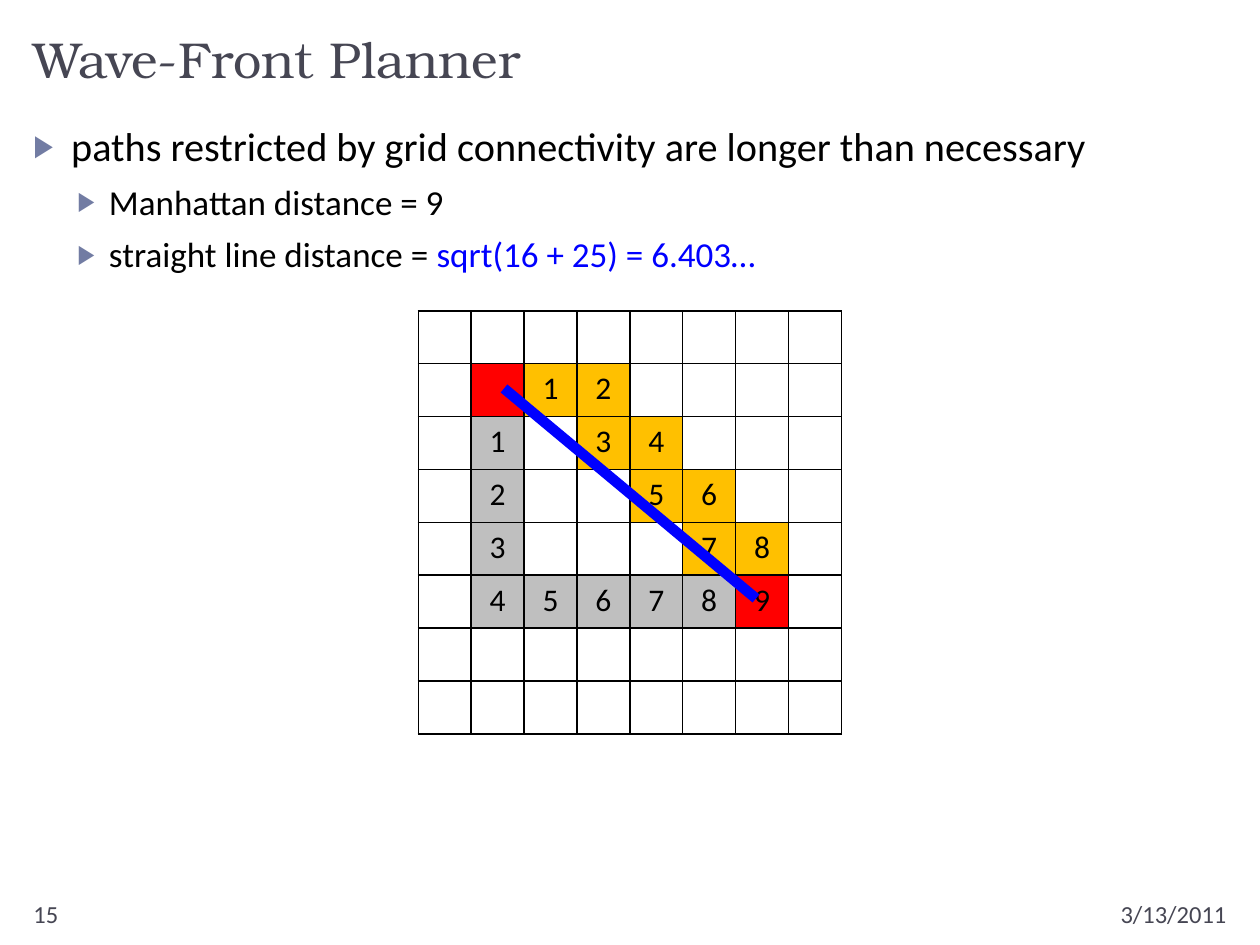
from lxml.etree import SubElement
from pptx import Presentation
from pptx.dml.color import RGBColor
from pptx.enum.shapes import MSO_CONNECTOR
from pptx.enum.text import MSO_ANCHOR, PP_ALIGN
from pptx.oxml.ns import qn
from pptx.util import Inches, Pt

COLORS = {
    "title": "464653", "text": "000000", "bullet": "727CA3",
    "line": "0000FF", "empty": "FFFFFF", "endpoint": "FF0000",
    "corner_path": "BFBFBF", "stair_path": "FFC000",
}
BODY_FONT, TITLE_FONT = "Calibri", "TeX Gyre Bonum"
UNIT = 1 / 6  # inches per column and row of the 60 x 45 layout grid

CELLS, CELL_SIZE = 8, 2.52
START = (1, 1)
MOVES = {"D": (1, 0), "R": (0, 1)}
PATHS = {"corner_path": "DDDDRRRRR", "stair_path": "RRDRDRDRD"}


def units(count):
    return Inches(count * UNIT)


def rgb(name):
    return RGBColor.from_string(COLORS[name])


def add_text(paragraph, text, size=18, color="text", font=BODY_FONT, align=PP_ALIGN.LEFT):
    paragraph.alignment = align
    run = paragraph.add_run()
    run.text = text
    run.font.size = Pt(size)
    run.font.name = font
    run.font.color.rgb = rgb(color)


def add_bullet(paragraph, level):
    paragraph.space_before = Pt(6)
    paragraph.level = level - 1
    margin, indent = {1: (0.3, -0.3), 2: (0.6, -0.25)}[level]
    properties = paragraph._p.get_or_add_pPr()
    properties.set("marL", str(Inches(margin)))
    properties.set("indent", str(Inches(indent)))
    color = SubElement(properties, qn("a:buClr"))
    SubElement(color, qn("a:srgbClr"), val=COLORS["bullet"])
    SubElement(properties, qn("a:buSzPct"), val="76000")
    SubElement(properties, qn("a:buFont"), typeface="Arial")
    SubElement(properties, qn("a:buChar"), char="▶")


def add_borders(cell):
    properties = cell._tc.get_or_add_tcPr()
    for position, side in enumerate(("lnL", "lnR", "lnT", "lnB")):
        border = SubElement(properties, qn(f"a:{side}"), w=str(Pt(1)))
        fill = SubElement(border, qn("a:solidFill"))
        SubElement(fill, qn("a:srgbClr"), val=COLORS["text"])
        properties.insert(position, border)


def trace_paths():
    """Map each visited (row, column) to its step label and colour."""
    visited = {START: ("", "endpoint")}
    for color, moves in PATHS.items():
        row, column = START
        for step, move in enumerate(moves, 1):
            row, column = row + MOVES[move][0], column + MOVES[move][1]
            visited[row, column] = (str(step), "endpoint" if step == len(moves) else color)
    return visited


class SlideBuilder:
    def __init__(self, presentation):
        self.slide = presentation.slides.add_slide(presentation.slide_layouts[6])

    def text_box(self, left, top, width, height, anchor=MSO_ANCHOR.TOP):
        shape = self.slide.shapes.add_textbox(*map(units, (left, top, width, height)))
        frame = shape.text_frame
        frame.word_wrap = True
        frame.vertical_anchor = anchor
        return frame

    def label(self, box, text, anchor=MSO_ANCHOR.TOP, **style):
        frame = self.text_box(*box, anchor=anchor)
        add_text(frame.paragraphs[0], text, **style)

    def bullets(self, box, items):
        frame = self.text_box(*box)
        for index, (level, runs) in enumerate(items):
            paragraph = frame.add_paragraph() if index else frame.paragraphs[0]
            add_bullet(paragraph, level)
            for text, color in runs:
                add_text(paragraph, text, size={1: 23, 2: 20}[level], color=color)

    def cell_grid(self, left, top, visited):
        side = units(CELLS * CELL_SIZE)
        table = self.slide.shapes.add_table(
            CELLS, CELLS, units(left), units(top), side, side).table
        table.first_row = table.horz_banding = False
        for index in range(CELLS):
            table.columns[index].width = table.rows[index].height = units(CELL_SIZE)
        for row in range(CELLS):
            for column in range(CELLS):
                cell = table.cell(row, column)
                text, color = visited.get((row, column), ("", "empty"))
                cell.fill.solid()
                cell.fill.fore_color.rgb = rgb(color)
                add_borders(cell)
                if text:
                    add_text(cell.text_frame.paragraphs[0], text, align=PP_ALIGN.CENTER)

    def line(self, start, end, color, width):
        connector = self.slide.shapes.add_connector(
            MSO_CONNECTOR.STRAIGHT, *map(units, start + end))
        connector.line.color.rgb = rgb(color)
        connector.line.width = Pt(width)
        SubElement(connector._element.spPr, qn("a:effectLst"))


def main():
    presentation = Presentation()
    presentation.slide_width, presentation.slide_height = units(60), units(45)
    builder = SlideBuilder(presentation)

    # Title and footer
    builder.label((1, 1, 58, 3.5), "Wave-Front Planner", anchor=MSO_ANCHOR.BOTTOM,
                  size=28.8, color="title", font=TITLE_FONT)
    builder.label((48, 42.5, 11, 1.6), "3/13/2011", size=14, color="title",
                  align=PP_ALIGN.RIGHT)
    builder.label((1, 42.5, 13, 1.6), "15", size=14, color="title")

    # Bullet list
    builder.bullets((1, 5.5, 58, 36), [
        (1, [("paths restricted by grid connectivity are longer than necessary", "text")]),
        (2, [("Manhattan distance = 9", "text")]),
        (2, [("straight line distance = ", "text"),
             ("sqrt(16 + 25) = 6.403…", "line")]),
    ])

    # Planner grid, centred, with the straight path over it
    builder.cell_grid((60 - CELLS * CELL_SIZE) / 2, 14.8, trace_paths())
    builder.line((24, 18.5), (36, 28.5), "line", 6)

    presentation.save("out.pptx")


if __name__ == "__main__":
    main()
